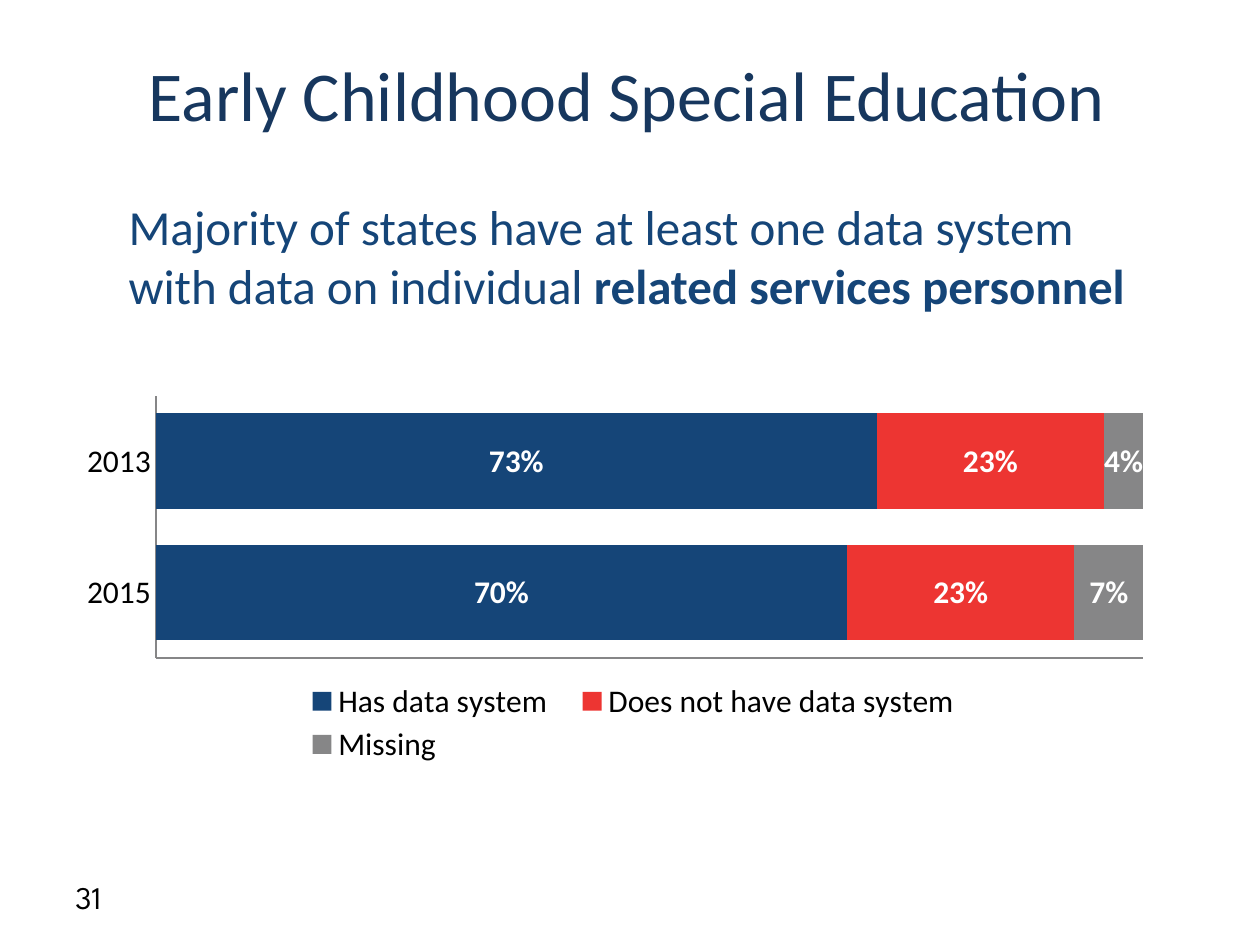
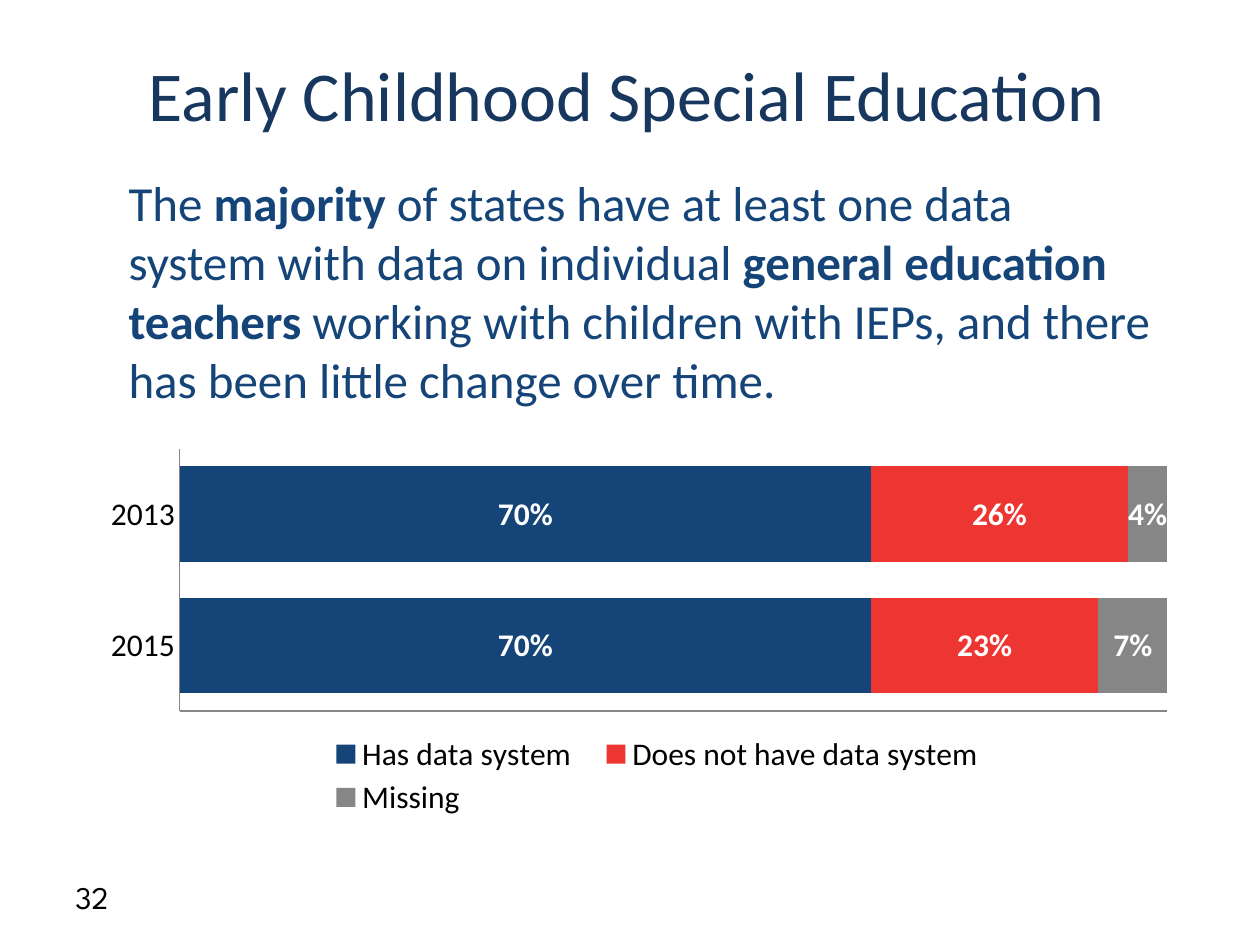
from lxml import etree
from pptx import Presentation
from pptx import util as u
from pptx.chart.data import CategoryChartData
from pptx.dml.color import RGBColor
from pptx.enum import chart as ch, text
from pptx.oxml import parse_xml
from pptx.oxml.ns import nsdecls, qn

W, H = u.Inches(10), u.Inches(7.5)
COLS, ROWS = 100, 75
FONT, NUMBER_FONT = "Calibri", "League Spartan"
NAVY, BLUE, RED, GREY = "17375E", "154578", "ED3532", "868687"
BLACK, WHITE = "000000", "FFFFFF"
TITLE = "Early Childhood Special Education"
YEARS = ["2015", "2013"]
ANSWERS = [("Has data system", BLUE), ("Does not have data system", RED), ("Missing", GREY)]

SLIDES = [
    dict(number=31, body_at=(9.2, 15.1, 83.3, 10.4), chart_at=(5.4, 30.8),
         runs=[("Majority of states have at least one data system with data on individual ", False),
               ("related services personnel", True)],
         shares=[(0.7, 0.73), (0.23, 0.23), (0.07, 0.04)]),
    dict(number=32, body_at=(9.2, 13.2, 83.3, 19.9), chart_at=(7.3, 35),
         runs=[("The ", False), ("majority", True),
               (" of states have at least one data system with data on individual ", False),
               ("general education teachers ", True),
               ("working with children with IEPs, and there has been little change over time.", False)],
         shares=[(0.7, 0.7), (0.23, 0.26), (0.07, 0.04)]),
]


def color(hex_string):
    return RGBColor.from_string(hex_string)


def grid(x, y, w, h):
    return [int(v) for v in (x * W / COLS, y * H / ROWS, w * W / COLS, h * H / ROWS)]


def set_font(font, size, fill, name=FONT, bold=None):
    font.size, font.name, font.bold = u.Pt(size), name, bold
    font.color.rgb = color(fill)


def write(sp, runs, at, size, fill, name=FONT, anchor=text.MSO_ANCHOR.TOP):
    sp.left, sp.top, sp.width, sp.height = grid(*at)
    tf = sp.text_frame
    tf.word_wrap, tf.auto_size = True, text.MSO_AUTO_SIZE.NONE
    tf.vertical_anchor = anchor
    p = tf.paragraphs[0]
    p.alignment = text.PP_ALIGN.LEFT
    for words, bold in runs:
        r = p.add_run()
        r.text = words
        set_font(r.font, size, fill, name, bold)
    return p


def remove_bullet(p):
    pPr = p._p.get_or_add_pPr()
    pPr.set("marL", "0")
    pPr.set("indent", "0")
    etree.SubElement(pPr, qn("a:buNone"))


def place_part(part, index, inner=False, **shares):
    for old in part.findall(qn("c:layout")):
        part.remove(old)
    target = '<c:layoutTarget val="inner"/>' if inner else ""
    modes = "".join(f'<c:{k}Mode val="edge"/>' for k in "xy")
    sizes = "".join(f'<c:{k} val="{v}"/>' for k, v in shares.items())
    part.insert(index, parse_xml(
        f'<c:layout {nsdecls("c")}><c:manualLayout>{target}{modes}{sizes}'
        '</c:manualLayout></c:layout>'))


def style_axis(axis):
    axis.has_major_gridlines = False
    axis.major_tick_mark = axis.minor_tick_mark = ch.XL_TICK_MARK.NONE
    axis.format.line.color.rgb = color(GREY)
    axis.format.line.width = u.Pt(0.75)


def add_share_chart(s, at, shares):
    data = CategoryChartData(number_format="0%")
    data.categories = YEARS
    for (name, _), values in zip(ANSWERS, shares):
        data.add_series(name, values)
    chart = s.shapes.add_chart(ch.XL_CHART_TYPE.BAR_STACKED, *grid(*at, 87.1, 30.2), data).chart
    chart.has_title = False
    set_font(chart.font, 18, BLACK)
    style_axis(chart.category_axis)
    axis = chart.value_axis
    style_axis(axis)
    axis.minimum_scale, axis.maximum_scale, axis.major_unit = 0, 1, 0.2
    axis.tick_label_position = ch.XL_TICK_LABEL_POSITION.NONE

    plot = chart.plots[0]
    plot.gap_width, plot.overlap, plot.vary_by_categories = 37, 100, False
    for series, (_, fill) in zip(plot.series, ANSWERS):
        series.format.fill.solid()
        series.format.fill.fore_color.rgb = color(fill)
        labels = series.data_labels
        labels.show_value = True
        labels.number_format, labels.number_format_is_linked = "0%", False
        set_font(labels.font, 18, WHITE, bold=True)

    chart.has_legend = True
    legend = chart.legend
    legend.position = ch.XL_LEGEND_POSITION.BOTTOM
    legend.include_in_layout = False
    place_part(legend._element, 1, x=0.2, y=0.76, w=0.63, h=0.24)
    place_part(chart._chartSpace.chart.plotArea, 0, inner=True, x=0.08, y=0.02, w=0.9, h=0.69)


def add_slide(prs, number, body_at, chart_at, runs, shares):
    s = prs.slides.add_slide(prs.slide_layouts[1])
    write(s.shapes.title, [(TITLE, False)], (10.8, 3.6, 85.4, 7.7), 40, NAVY)
    remove_bullet(write(s.placeholders[1], runs, body_at, 28, BLUE))
    add_share_chart(s, chart_at, shares)
    number_at = (5, 69.2, 23.3, 4)
    write(s.shapes.add_textbox(*grid(*number_at)), [(str(number), False)], number_at, 18, BLACK,
          NUMBER_FONT, text.MSO_ANCHOR.MIDDLE)


def main():
    prs = Presentation()
    prs.slide_width, prs.slide_height = W, H
    for content in SLIDES:
        add_slide(prs, **content)
    prs.save("out.pptx")


if __name__ == "__main__":
    main()
